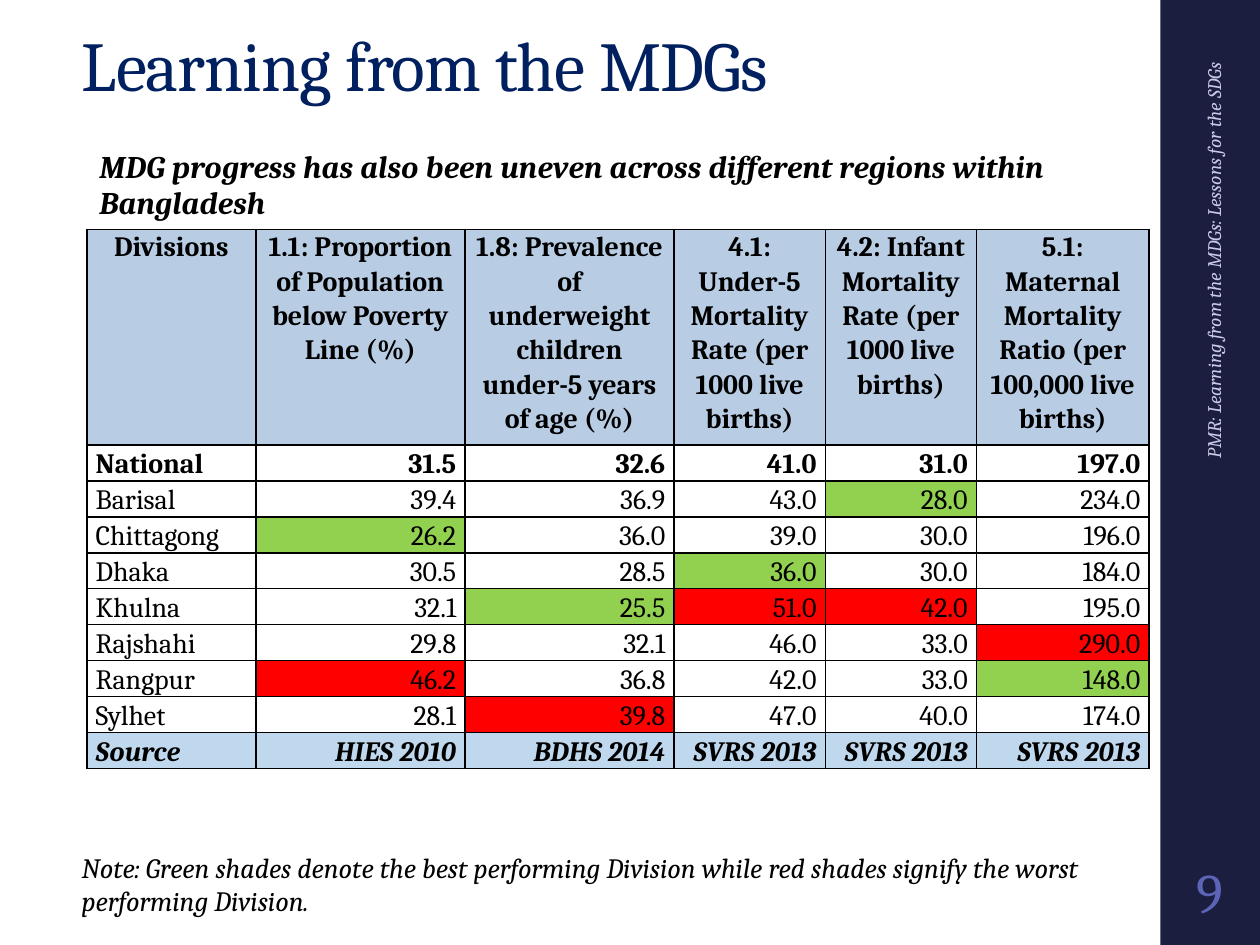
import pptx
import pptx.dml.color
import pptx.enum.shapes
import pptx.enum.text
import pptx.oxml
import pptx.oxml.ns
import pptx.util

Inches = pptx.util.Inches
Pt = pptx.util.Pt
ALIGN = pptx.enum.text.PP_ALIGN
ANCHOR = pptx.enum.text.MSO_ANCHOR

COLORS = {
    "sidebar": "1B1E3E", "title": "002060", "text": "000000",
    "number": "5C64B7", "footer": "C9CBE7", "header": "B8CCE4",
    "source": "C0D8ED", "best": "92D050", "worst": "FF0000",
}
FONT = "Cambria"

TITLE = "Learning from the MDGs"
SUBTITLE = "MDG progress has also been uneven across different regions within Bangladesh"
NOTE = ("Note: Green shades denote the best performing Division while red shades "
        "signify the worst performing Division.")
FOOTER = "PMR: Learning from the MDGs: Lessons for the SDGs"
PAGE = "9"

HEADERS = [
    "Divisions",
    "1.1: Proportion of Population below Poverty Line (%)",
    "1.8: Prevalence of underweight children under-5 years of age (%)",
    "4.1: Under-5 Mortality Rate (per 1000 live births)",
    "4.2: Infant Mortality Rate (per 1000 live births)",
    "5.1: Maternal Mortality Ratio (per 100,000 live births)",
]
NATIONAL = ("National", 31.5, 32.6, 41.0, 31.0, 197.0)
DIVISIONS = [
    ("Barisal", 39.4, 36.9, 43.0, 28.0, 234.0),
    ("Chittagong", 26.2, 36.0, 39.0, 30.0, 196.0),
    ("Dhaka", 30.5, 28.5, 36.0, 30.0, 184.0),
    ("Khulna", 32.1, 25.5, 51.0, 42.0, 195.0),
    ("Rajshahi", 29.8, 32.1, 46.0, 33.0, 290.0),
    ("Rangpur", 46.2, 36.8, 42.0, 33.0, 148.0),
    ("Sylhet", 28.1, 39.8, 47.0, 40.0, 174.0),
]
SOURCES = ("Source", "HIES 2010", "BDHS 2014", "SVRS 2013", "SVRS 2013", "SVRS 2013")

TABLE_BOX = (0.69, 1.82, 8.42, 4.28)
COLUMN_WIDTHS = [1.34, 1.66, 1.66, 1.2, 1.2, 1.37]
HEADER_HEIGHT = 1.71


def rgb(name):
    return pptx.dml.color.RGBColor.from_string(COLORS[name])


def write(text_frame, text, size, color="text", align=None, line=None,
          bold=False, italic=False, tracking=None):
    """Fill the frame with one formatted paragraph; tracking is in points."""
    text_frame.text = text
    text_frame.word_wrap = True
    paragraph = text_frame.paragraphs[0]
    paragraph.alignment = align
    if line:
        paragraph.line_spacing = line
    run = paragraph.runs[0]
    run.font.name = FONT
    run.font.size = Pt(size)
    run.font.bold = bold
    run.font.italic = italic
    run.font.color.rgb = rgb(color)
    if tracking:
        run.font._element.set("spc", str(int(tracking * 100)))


def add_text(slide, box, text, size, anchor=ANCHOR.TOP, **style):
    shape = slide.shapes.add_textbox(*map(Inches, box))
    shape.text_frame.vertical_anchor = anchor
    write(shape.text_frame, text, size, **style)
    return shape


def add_borders(cell):
    properties = cell._tc.get_or_add_tcPr()
    for index, side in enumerate(("lnL", "lnR", "lnT", "lnB")):
        properties.insert(index, pptx.oxml.parse_xml(
            f'<a:{side} {pptx.oxml.ns.nsdecls("a")} w="12700"><a:solidFill>'
            f'<a:srgbClr val="{COLORS["text"]}"/></a:solidFill></a:{side}>'))


def cell_fill(row, column, value, last_row):
    """Shade header and source rows, and each indicator's best and worst division."""
    if row == 0:
        return "header"
    if row == last_row:
        return "source"
    if row == 1 or column == 0:
        return None
    values = [division[column] for division in DIVISIONS]
    return {min(values): "best", max(values): "worst"}.get(value)


def add_division_table(slide):
    rows = [HEADERS, NATIONAL, *DIVISIONS, SOURCES]
    last_row = len(rows) - 1
    frame = slide.shapes.add_table(len(rows), len(HEADERS), *map(Inches, TABLE_BOX))
    table = frame.table
    for column, width in zip(table.columns, COLUMN_WIDTHS):
        column.width = Inches(width)
    row_height = (TABLE_BOX[3] - HEADER_HEIGHT) / last_row
    for r, values in enumerate(rows):
        table.rows[r].height = Inches(HEADER_HEIGHT if r == 0 else row_height)
        for c, value in enumerate(values):
            cell = table.cell(r, c)
            cell.margin_left = cell.margin_right = Inches(0.07)
            cell.margin_top = cell.margin_bottom = 0
            cell.vertical_anchor = ANCHOR.TOP if r == 0 else ANCHOR.BOTTOM
            fill = cell_fill(r, c, value, last_row)
            if fill:
                cell.fill.solid()
                cell.fill.fore_color.rgb = rgb(fill)
            else:
                cell.fill.background()
            align = ALIGN.CENTER if r == 0 else ALIGN.RIGHT if c else ALIGN.LEFT
            text = value if isinstance(value, str) else f"{value:.1f}"
            write(cell.text_frame, text, 16, align=align, line=1.07,
                  bold=r in (0, 1, last_row), italic=r == last_row)
            add_borders(cell)


def main():
    presentation = pptx.Presentation()
    presentation.slide_width = Inches(10)
    presentation.slide_height = Inches(7.5)
    slide = presentation.slides.add_slide(presentation.slide_layouts[5])

    title = slide.shapes.title
    title.left, title.top, title.width, title.height = map(Inches, (0.55, 0.28, 8.56, 0.62))
    title.text_frame.vertical_anchor = ANCHOR.BOTTOM
    write(title.text_frame, TITLE, 40, color="title", align=ALIGN.LEFT,
          line=0.9, tracking=-0.5)
    title.text_frame.auto_size = pptx.enum.text.MSO_AUTO_SIZE.NONE

    sidebar = slide.shapes.add_shape(
        pptx.enum.shapes.MSO_SHAPE.RECTANGLE, *map(Inches, (9.21, 0, 0.79, 7.5)))
    sidebar.shadow.inherit = False
    sidebar.fill.solid()
    sidebar.fill.fore_color.rgb = rgb("sidebar")
    sidebar.line.fill.background()

    page = add_text(slide, (9.23, 6.75, 0.75, 0.65), PAGE, 32, anchor=ANCHOR.MIDDLE,
                    color="number", align=ALIGN.CENTER)
    page.text_frame.margin_left = page.text_frame.margin_right = Inches(0.03)
    add_text(slide, (0.69, 1.14, 8.23, 0.68), SUBTITLE, 18, line=0.95,
             bold=True, italic=True, tracking=0.1)
    add_division_table(slide)
    add_text(slide, (0.55, 6.7, 8.16, 0.64), NOTE, 16, italic=True)
    footer = add_text(slide, (7.15, 2.67, 4.96, 0.41), FOOTER, 11, anchor=ANCHOR.MIDDLE,
                      color="footer", align=ALIGN.RIGHT, italic=True)
    footer.rotation = 270

    presentation.save("out.pptx")


if __name__ == "__main__":
    main()
